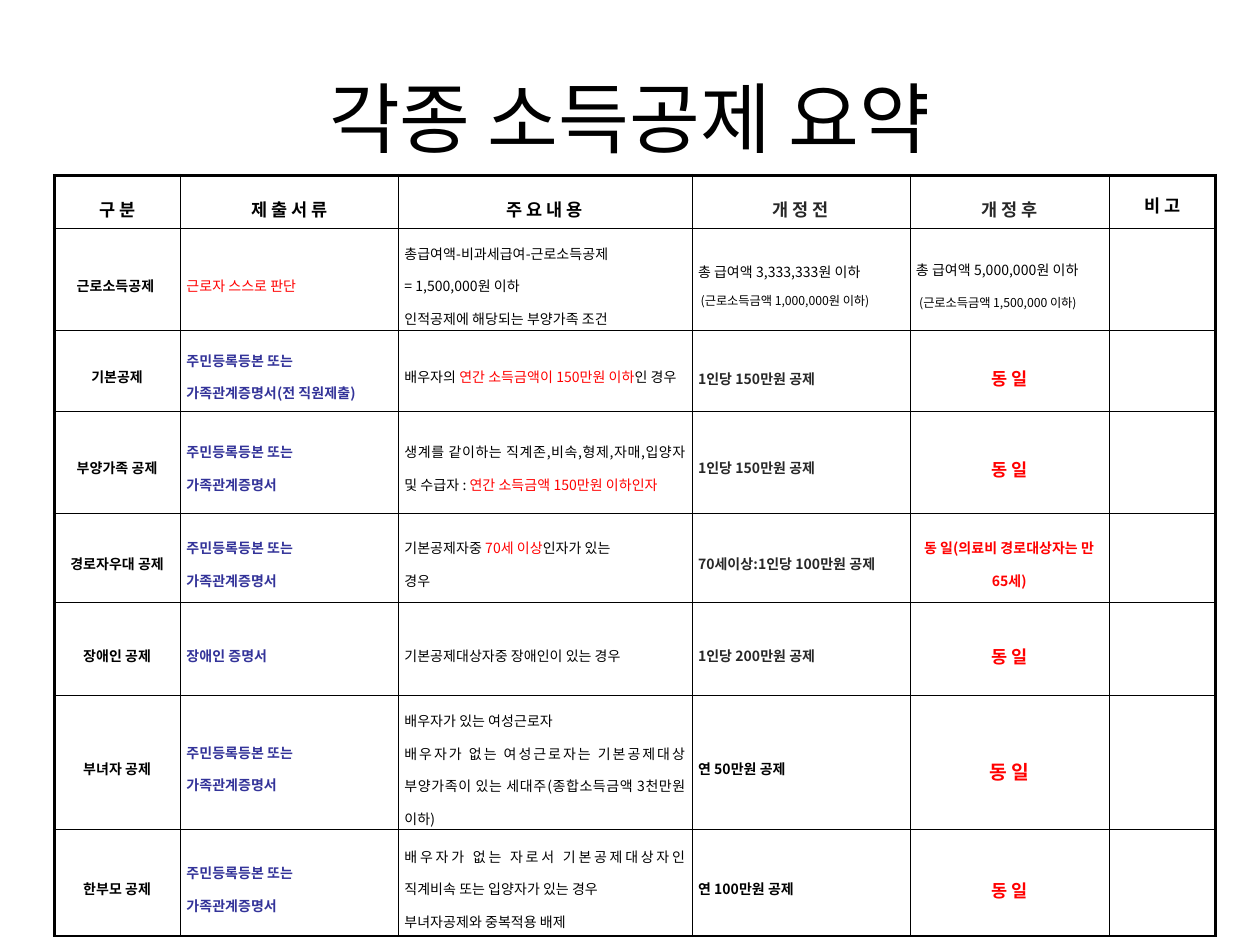
from lxml.etree import SubElement
from pptx import Presentation
from pptx.dml.color import RGBColor
from pptx.enum.text import MSO_ANCHOR, PP_ALIGN
from pptx.oxml.ns import qn
from pptx.util import Inches, Pt

FONT = "Noto Sans CJK KR"
COLORS = {"black": "000000", "gray": "282828", "red": "FF0000", "blue": "333399"}
COL_WIDTHS = [1, 1.73, 2.33, 1.73, 1.58, 0.85]
ROW_HEIGHTS = [0.42, 0.81, 0.64, 0.81, 0.71, 0.74, 1.06, 0.85]
THICK, THIN = 1.75, 0.25

FAMILY_PAPERS = "주민등록등본 또는 \n가족관계증명서"
SAME = "동 일"

# A newline starts a paragraph; text between bars is red.
ROWS = [
    ["구 분", "제 출 서 류", "주 요 내 용", "개 정 전", "개 정 후", "비 고"],
    ["근로소득공제 ", "근로자 스스로 판단",
     "총급여액-비과세급여-근로소득공제 \n= 1,500,000원 이하\n인적공제에 해당되는 부양가족 조건",
     "총 급여액 3,333,333원 이하  \n (근로소득금액 1,000,000원 이하)",
     "총 급여액 5,000,000원 이하\n| |(근로소득금액 1,500,000 이하)", ""],
    ["기본공제", FAMILY_PAPERS + "(전 직원제출)",
     "배우자의 |연간 소득금액이 150만원 이하|인 경우",
     "1인당 150만원 공제", SAME, ""],
    ["부양가족 공제", FAMILY_PAPERS,
     "생계를 같이하는 직계존,비속,형제,자매,입양자 및 수급자 : |연간 소득금액 150만원 이하인자|",
     "1인당 150만원 공제", SAME, ""],
    ["경로자우대 공제", FAMILY_PAPERS,
     "기본공제자중 |70세 이상|인자가 있는 \n경우",
     "70세이상:1인당 100만원 공제", "동 일(의료비 경로대상자는 만65세)", ""],
    ["장애인 공제", "장애인 증명서", "기본공제대상자중 장애인이 있는 경우",
     "1인당 200만원 공제", SAME, ""],
    ["부녀자 공제", FAMILY_PAPERS,
     "배우자가 있는 여성근로자\n"
     "배우자가 없는 여성근로자는 기본공제대상 부양가족이 있는 세대주(종합소득금액 3천만원 이하)",
     "연 50만원 공제", SAME, ""],
    ["한부모 공제", FAMILY_PAPERS,
     "배우자가 없는 자로서 기본공제대상자인 직계비속 또는 입양자가 있는 경우\n"
     "부녀자공제와 중복적용 배제",
     "연 100만원 공제", SAME, ""],
]

# Style: size, colour, bold, alignment, line spacing
HEADER = dict(size=10, color="black", bold=True, align=PP_ALIGN.CENTER, spacing=1.6)
BODY = dict(size=8, color="black", bold=False, align=PP_ALIGN.JUSTIFY, spacing=1.6)
COLUMN_STYLES = [
    dict(bold=True, align=PP_ALIGN.CENTER),
    dict(bold=True, color="blue"),
    {},
    dict(bold=True, color="gray"),
    dict(bold=True, color="red", align=PP_ALIGN.CENTER, size=10),
    {},
]
PLAIN = dict(BODY, small_after_first=True)
CELL_STYLES = {
    (0, 3): dict(color="gray"),
    (0, 4): dict(color="gray"),
    (0, 5): dict(spacing=1.3),
    (1, 1): dict(color="red", bold=False),
    (1, 3): PLAIN,
    (1, 4): PLAIN,
    (2, 3): dict(spacing=1.8),
    (4, 4): dict(size=8),
    (6, 3): dict(color="black"),
    (6, 4): dict(size=11),
    (7, 3): dict(color="black"),
}


def cell_style(row, col):
    base = HEADER if row == 0 else {**BODY, **COLUMN_STYLES[col]}
    return {**base, **CELL_STYLES.get((row, col), {})}


def add_run(p, text, size, color, bold=False):
    """Add a run in the slide's font, with pair kerning off."""
    r = p.add_run()
    r.text = text
    r.font.name = FONT
    r.font.size = Pt(size)
    r.font.bold = bold
    r.font.color.rgb = RGBColor.from_string(COLORS[color])
    r_pr = r.font._element
    r_pr.set("kern", "0")
    r_pr.find(qn("a:latin")).addnext(r_pr.makeelement(qn("a:ea"), {"typeface": FONT}))


def fill_text(tf, text, size, color, bold, align, spacing, small_after_first=False):
    for i, line in enumerate(text.split("\n")):
        p = tf.paragraphs[0] if i == 0 else tf.add_paragraph()
        p.alignment = align
        p.line_spacing = spacing
        for j, part in enumerate(line.split("|")):
            small = small_after_first and i and part.strip() or (small_after_first and i and "|" not in line)
            if part:
                part_color = "red" if j % 2 and part.strip() else color
                add_run(p, part, 7 if small else size, part_color, bold)


def set_borders(cell, widths):
    """Draw black borders; widths are left, right, top, bottom in points."""
    tc_pr = cell._tc.get_or_add_tcPr()
    for side, width in zip("LRTB", widths):
        ln = SubElement(tc_pr, qn(f"a:ln{side}"), w=str(Pt(width)))
        fill = SubElement(ln, qn("a:solidFill"))
        SubElement(fill, qn("a:srgbClr"), val=COLORS["black"])


def add_title(slide, text):
    tf = slide.shapes.add_textbox(Inches(0.5), Inches(0.3), Inches(9), Inches(1.25)).text_frame
    tf.word_wrap = True
    tf.vertical_anchor = MSO_ANCHOR.MIDDLE
    p = tf.paragraphs[0]
    p.alignment = PP_ALIGN.CENTER
    add_run(p, text, 44, "black")


def add_deduction_table(slide):
    n_rows, n_cols = len(ROWS), len(COL_WIDTHS)
    table = slide.shapes.add_table(
        n_rows, n_cols, Inches(0.43), Inches(1.39),
        Inches(sum(COL_WIDTHS)), Inches(sum(ROW_HEIGHTS))).table
    table.first_row = table.horz_banding = False
    for column, width in zip(table.columns, COL_WIDTHS):
        column.width = Inches(width)
    for row, height in zip(table.rows, ROW_HEIGHTS):
        row.height = Inches(height)
    for i, texts in enumerate(ROWS):
        for j, text in enumerate(texts):
            cell = table.cell(i, j)
            cell.vertical_anchor = MSO_ANCHOR.MIDDLE
            cell.margin_left = cell.margin_right = Inches(0.05)
            cell.margin_top = cell.margin_bottom = Inches(0.02)
            edges = (j == 0, j == n_cols - 1, i == 0, i == n_rows - 1)
            set_borders(cell, [THICK if edge else THIN for edge in edges])
            cell.fill.background()
            if text:
                fill_text(cell.text_frame, text, **cell_style(i, j))


def main():
    prs = Presentation()
    prs.slide_width, prs.slide_height = Inches(10), Inches(7.5)
    slide = prs.slides.add_slide(prs.slide_layouts[6])
    add_title(slide, "각종 소득공제 요약")
    add_deduction_table(slide)
    prs.save("out.pptx")


if __name__ == "__main__":
    main()
